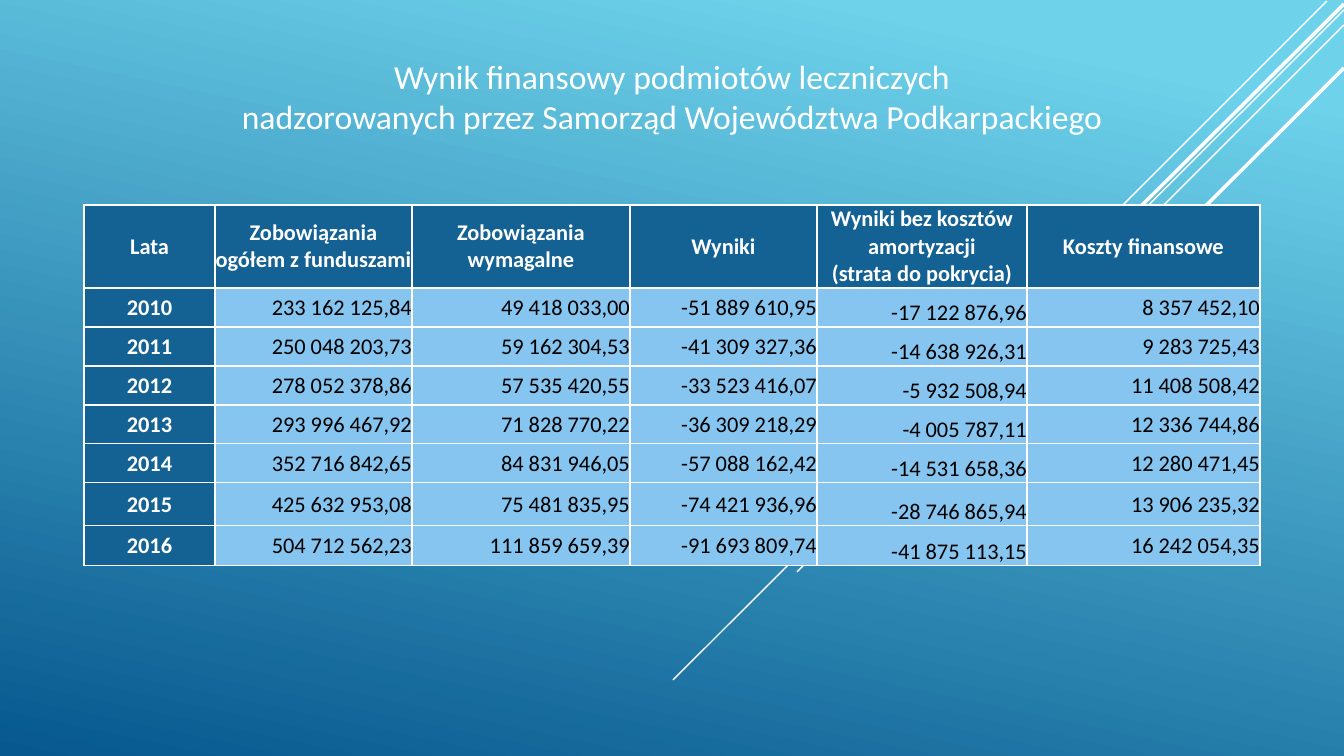
import pptx
import pptx.util
import pptx.dml.color
import pptx.enum.shapes
import pptx.enum.text
import pptx.oxml
import pptx.oxml.ns
import lxml.etree


def px(n):
    return pptx.util.Emu(round(n * 914400 / 100.8))


def rgb(code):
    return pptx.dml.color.RGBColor.from_string(code)


WHITE, BLACK, NAVY, SKY = "FFFFFF", "000000", "146194", "86C5EF"
ALIGN = pptx.enum.text.PP_ALIGN
ANCHOR = pptx.enum.text.MSO_ANCHOR

deck = pptx.Presentation()
deck.slide_width, deck.slide_height = px(1344), px(756)
slide = deck.slides.add_slide(deck.slide_layouts[6])

fill = slide.background.fill
fill.gradient()
fill.gradient_angle = 258
for stop, (place, code) in zip(fill.gradient_stops, [(0.1, "6ED2EB"), (1, "06588E")]):
    stop.position = place
    stop.color.rgb = rgb(code)

rays = [
    (1327, 1, 907, 421, 1),
    (1344, 10, 673, 680, 1),
    (1344, 25, 797, 572, 1),
    (1344, 4, 808, 538, 2.5),
    (1344, 68, 865, 546, 2.5),
]
for x1, y1, x2, y2, width in rays:
    ray = slide.shapes.add_connector(
        pptx.enum.shapes.MSO_CONNECTOR.STRAIGHT, px(x1), px(y1), px(x2), px(y2))
    ray.line.color.rgb = rgb(WHITE)
    ray.line.width = pptx.util.Pt(width)
    lxml.etree.SubElement(ray._element.spPr, pptx.oxml.ns.qn("a:effectLst"))

rows = [
    ["Lata", "Zobowiązania ogółem z funduszami", "Zobowiązania wymagalne", "Wyniki",
     "Wyniki bez kosztów amortyzacji\n(strata do pokrycia)", "Koszty finansowe"],
    ["2010", "233 162 125,84", "49 418 033,00", "-51 889 610,95", "-17 122 876,96", "8 357 452,10"],
    ["2011", "250 048 203,73", "59 162 304,53", "-41 309 327,36", "-14 638 926,31", "9 283 725,43"],
    ["2012", "278 052 378,86", "57 535 420,55", "-33 523 416,07", "-5 932 508,94", "11 408 508,42"],
    ["2013", "293 996 467,92", "71 828 770,22", "-36 309 218,29", "-4 005 787,11", "12 336 744,86"],
    ["2014", "352 716 842,65", "84 831 946,05", "-57 088 162,42", "-14 531 658,36", "12 280 471,45"],
    ["2015", "425 632 953,08", "75 481 835,95", "-74 421 936,96", "-28 746 865,94", "13 906 235,32"],
    ["2016", "504 712 562,23", "111 859 659,39", "-91 693 809,74", "-41 875 113,15", "16 242 054,35"],
]
widths = [131, 197, 218, 187, 210, 233]
heights = [83] + [39] * 5 + [43, 40]
table = slide.shapes.add_table(
    len(rows), len(widths), px(84), px(205), px(sum(widths)), px(sum(heights))).table
for col, width in zip(table.columns, widths):
    col.width = px(width)
for row, height in zip(table.rows, heights):
    row.height = px(height)

for r, row in enumerate(rows):
    for c, text in enumerate(row):
        head = r == 0 or c == 0
        cell = table.cell(r, c)
        cell.text = text
        cell.margin_left = cell.margin_right = cell.margin_top = cell.margin_bottom = 0
        cell.vertical_anchor = ANCHOR.BOTTOM if c == 4 and not head else ANCHOR.MIDDLE
        cell.fill.solid()
        cell.fill.fore_color.rgb = rgb(NAVY if head else SKY)
        for para in cell.text_frame.paragraphs:
            para.alignment = ALIGN.CENTER if head else ALIGN.RIGHT
            para.font.name = "Calibri"
            para.font.size = pptx.util.Pt(16)
            para.font.bold = head
            para.font.color.rgb = rgb(WHITE if head else BLACK)
        props = cell._tc.get_or_add_tcPr()
        for n, side in enumerate(["lnL", "lnR", "lnT", "lnB"]):
            props.insert(n, pptx.oxml.parse_xml(
                f'<a:{side} {pptx.oxml.ns.nsdecls("a")} w="12700"><a:solidFill>'
                f'<a:srgbClr val="{WHITE}"/></a:solidFill></a:{side}>'))

title = slide.shapes.add_textbox(px(216), px(51), px(912), px(92)).text_frame
title.word_wrap = True
title.text = "Wynik finansowy podmiotów leczniczych\nnadzorowanych przez Samorząd Województwa Podkarpackiego"
for para in title.paragraphs:
    para.alignment = ALIGN.CENTER
    para.font.name = "Calibri"
    para.font.size = pptx.util.Pt(24)
    para.font.color.rgb = rgb(WHITE)

deck.save("out.pptx")
